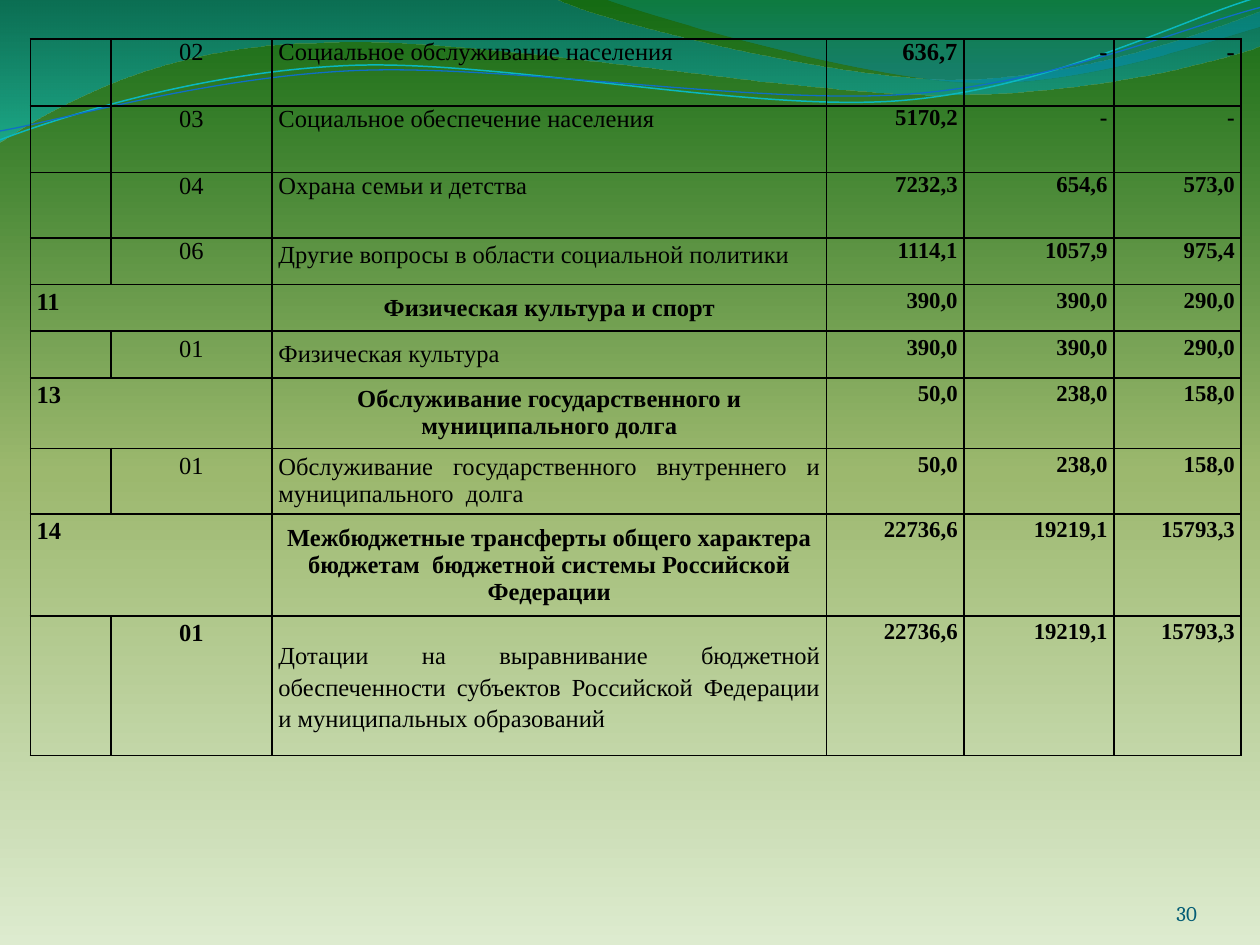
from math import cos, radians, sin

from lxml import etree
from pptx import Presentation
from pptx.dml.color import RGBColor
from pptx.enum.text import MSO_ANCHOR, PP_ALIGN
from pptx.oxml.ns import qn
from pptx.util import Inches, Pt

LEFT, CENTER, RIGHT, JUSTIFY = PP_ALIGN.LEFT, PP_ALIGN.CENTER, PP_ALIGN.RIGHT, PP_ALIGN.JUSTIFY
TOP, MIDDLE, BOTTOM = MSO_ANCHOR.TOP, MSO_ANCHOR.MIDDLE, MSO_ANCHOR.BOTTOM

COLORS = {
    "text": "000000", "number": "045D75",
    "pale": "DDEBCF", "olive": "9CB86E", "green": "156B13",
    "blue": "0074A1", "aqua": "00C6CF", "teal": "00A1A9", "azure": "008BBF",
    "line_aqua": "0AB8BF", "line_blue": "0F6FC6",
}
BODY_FONT = "Times New Roman"
NUMBER_FONT = "Cambria"

COLUMNS = [0.64, 1.28, 4.4, 1.09, 1.19, 1.01]
HEIGHTS = [0.53, 0.53, 0.52, 0.37, 0.37, 0.37, 0.56, 0.52, 0.81, 1.11]
BUDGET = [
    ("", "02", "Социальное обслуживание населения", "636,7", "-", "-"),
    ("", "03", "Социальное обеспечение населения", "5170,2", "-", "-"),
    ("", "04", "Охрана семьи и детства", "7232,3", "654,6", "573,0"),
    ("", "06", "Другие вопросы в области социальной политики", "1114,1", "1057,9", "975,4"),
    ("11", "", "Физическая культура и спорт", "390,0", "390,0", "290,0"),
    ("", "01", "Физическая культура", "390,0", "390,0", "290,0"),
    ("13", "", "Обслуживание государственного и муниципального долга", "50,0", "238,0", "158,0"),
    ("", "01", "Обслуживание государственного внутреннего и муниципального  долга",
     "50,0", "238,0", "158,0"),
    ("14", "", "Межбюджетные трансферты общего характера бюджетам  бюджетной системы "
     "Российской Федерации", "22736,6", "19219,1", "15793,3"),
    ("", "01", "Дотации на выравнивание бюджетной обеспеченности субъектов Российской "
     "Федерации и муниципальных образований", "22736,6", "19219,1", "15793,3"),
]
FIRST_SECTION = 4
LOOSE_NAMES = (3, 9)

WIDE_WAVE = [
    (0, -0.01), (4.4, -0.01), (4.76, 0.17, 6.64, 0.63, 7.58, 0.63),
    (8.53, 0.63, 9.58, 0.26, 10, 0.09), (10.01, 0.36),
    (9.83, 0.44, 8.7, 0.76, 7.46, 0.75), (6.22, 0.75, 3.82, 0.28, 2.57, 0.34),
    (1.29, 0.35, 0.46, 0.83, -0.01, 1.13), (0, -0.01),
]
CORNER_WAVE = [
    (4.79, -0.01), (5.09, 0.11, 6.82, 0.62, 7.69, 0.65),
    (8.56, 0.69, 9.61, 0.32, 10, 0.21), (10, 0), (4.79, -0.01),
]
AQUA_CURVE = [
    (0, 1.11), (0.48, 0.93, 1.58, 0.57, 2.77, 0.52),
    (3.95, 0.47, 5.93, 0.89, 7.13, 0.8), (8.33, 0.71, 9.38, 0.15, 9.98, -0.02),
]
BLUE_CURVE = [
    (0, 1.04), (0.47, 0.96, 1.64, 0.61, 2.83, 0.56),
    (4.03, 0.51, 5.97, 0.83, 7.17, 0.75), (8.36, 0.67, 9.41, 0.21, 10, 0.06),
]
CURVE_TILT = -2.7


def rgb(name):
    return RGBColor.from_string(COLORS[name])


def set_gradient(fill, element, stops, angle):
    fill.gradient()
    gradient = element.find(".//" + qn("a:gradFill"))
    stop_list = gradient.find(qn("a:gsLst"))
    for old in list(stop_list):
        stop_list.remove(old)
    for position, name, opacity in stops:
        stop = etree.SubElement(stop_list, qn("a:gs"), pos=str(position * 1000))
        color = etree.SubElement(stop, qn("a:srgbClr"), val=COLORS[name])
        if opacity < 100:
            etree.SubElement(color, qn("a:alpha"), val=str(opacity * 1000))
    gradient.find(qn("a:lin")).set("ang", str(angle * 60000))


def turn(point, center, degrees):
    angle = radians(degrees)
    dx, dy = point[0] - center[0], point[1] - center[1]
    return (center[0] + dx * cos(angle) - dy * sin(angle),
            center[1] + dx * sin(angle) + dy * cos(angle))


def add_outline(page, segments, close, tilt=0, center=(0, 0)):
    groups = [
        [tuple(Inches(value) for value in turn(pair, center, -tilt))
         for pair in zip(segment[::2], segment[1::2])]
        for segment in segments
    ]
    builder = page.shapes.build_freeform(*groups[0][0])
    builder.add_line_segments([group[-1] for group in groups[1:]], close=close)
    shape = builder.convert_to_shape()
    for group, line in zip(groups[1:], list(shape._element.iter(qn("a:lnTo")))):
        if len(group) == 3:
            curve = etree.Element(qn("a:cubicBezTo"))
            for x, y in group:
                etree.SubElement(curve, qn("a:pt"), x=str(x - shape.left), y=str(y - shape.top))
            line.getparent().replace(line, curve)
    shape.rotation = tilt
    shape.shadow.inherit = False
    return shape


def add_waves(page):
    for segments, stops in (
        (WIDE_WAVE, [(0, "blue", 45), (100, "aqua", 55)]),
        (CORNER_WAVE, [(0, "teal", 30), (80, "azure", 45)]),
    ):
        wave = add_outline(page, segments, True)
        set_gradient(wave.fill, wave._element, stops, 90)
        wave.line.fill.background()
    for segments, color, width, center in (
        (AQUA_CURVE, "line_aqua", 0.85, (4.99, 0.57)),
        (BLUE_CURVE, "line_blue", 0.75, (5, 0.59)),
    ):
        curve = add_outline(page, segments, False, CURVE_TILT, center)
        curve.fill.background()
        curve.line.color.rgb = rgb(color)
        curve.line.width = Pt(width)


def write(para, text, font, size, color, align, bold=False, loose=False):
    para.alignment = align
    if loose:
        para.line_spacing = 1.15
        para.space_after = Pt(10)
    span = para.add_run()
    span.text = text
    span.font.name = font
    span.font.size = Pt(size)
    span.font.bold = bold
    span.font.color.rgb = rgb(color)


def format_cell(cell):
    cell.margin_left = cell.margin_right = Inches(0.05)
    cell.margin_top = cell.margin_bottom = 0
    cell.fill.background()
    properties = cell._tc.get_or_add_tcPr()
    for index, side in enumerate(("lnL", "lnR", "lnT", "lnB")):
        border = etree.Element(qn("a:" + side), w=str(Pt(1)))
        paint = etree.SubElement(border, qn("a:solidFill"))
        etree.SubElement(paint, qn("a:srgbClr"), val=COLORS["text"])
        properties.insert(index, border)


def cell_style(row, column, is_section):
    loose = row >= FIRST_SECTION
    if column == 0:
        return 14, LEFT, True, loose
    if column == 1:
        return 14, CENTER, row == len(BUDGET) - 1, loose
    if column == 2:
        return 14, CENTER if is_section else JUSTIFY, is_section, row in LOOSE_NAMES
    return 14 if row == 0 else 13, RIGHT, True, loose


def add_budget_table(page, left, top):
    frame = page.shapes.add_table(
        len(BUDGET), len(COLUMNS), Inches(left), Inches(top),
        Inches(sum(COLUMNS)), Inches(sum(HEIGHTS)))
    table = frame.table
    table.first_row = table.horz_banding = False
    for column, width in zip(table.columns, COLUMNS):
        column.width = Inches(width)
    for row, (values, height) in enumerate(zip(BUDGET, HEIGHTS)):
        table.rows[row].height = Inches(height)
        is_section = bool(values[0])
        for column, text in enumerate(values):
            cell = table.cell(row, column)
            format_cell(cell)
            if text:
                size, align, bold, loose = cell_style(row, column, is_section)
                write(cell.text_frame.paragraphs[0], text, BODY_FONT, size, "text",
                      align, bold, loose)
            cell.vertical_anchor = MIDDLE if column == 2 and row >= FIRST_SECTION else TOP
        if is_section:
            table.cell(row, 0).merge(table.cell(row, 1))


def add_page_number(page, left, top, width, height):
    box = page.shapes.add_textbox(Inches(left), Inches(top), Inches(width), Inches(height))
    frame = box.text_frame
    frame.word_wrap = True
    frame.vertical_anchor = BOTTOM
    frame.margin_left = frame.margin_right = frame.margin_top = frame.margin_bottom = 0
    write(frame.paragraphs[0], "30", NUMBER_FONT, 12, "number", RIGHT)


def main():
    deck = Presentation()
    deck.slide_width, deck.slide_height = Inches(10), Inches(7.5)
    page = deck.slides.add_slide(deck.slide_layouts[6])
    set_gradient(page.background.fill, page._element,
                 [(0, "pale", 100), (50, "olive", 100), (100, "green", 100)], 270)
    add_waves(page)
    add_page_number(page, 8.67, 6.95, 0.83, 0.4)
    add_budget_table(page, 0.24, 0.31)
    deck.save("out.pptx")


if __name__ == "__main__":
    main()
